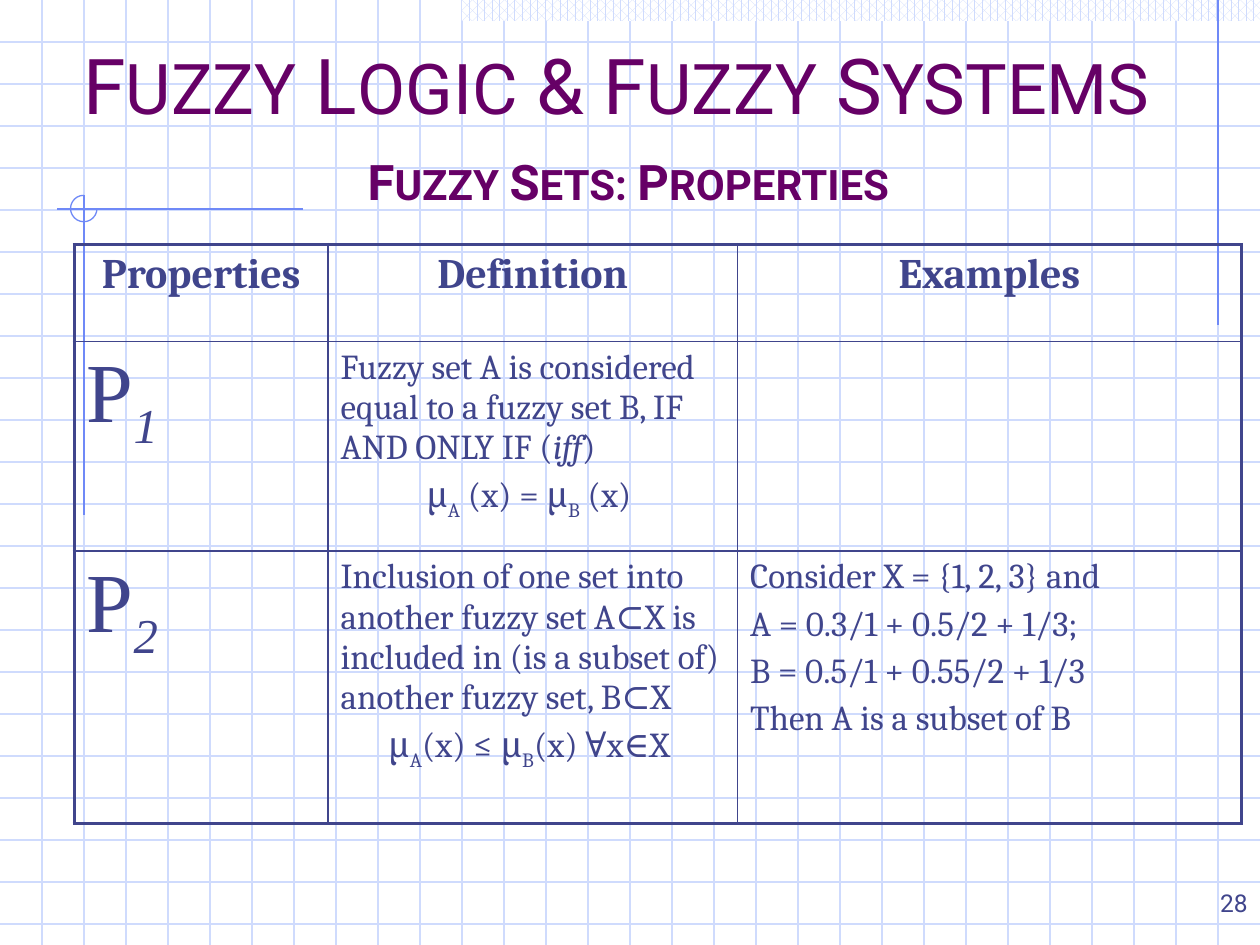
"""Build the slide on fuzzy set properties, laid out on a grid of 30 columns."""
from dataclasses import dataclass
from typing import Optional

from lxml import etree
from pptx import Presentation
from pptx import util as u
from pptx.dml.color import RGBColor
from pptx.enum import dml, shapes, text
from pptx.oxml import ns

COLORS = {"title": "660066", "ink": "40458C", "accent": "6F89F7",
          "band": "CFDBFD", "paper": "FFFFFF"}
COLUMNS, ROWS = 30, 22.5
WIDTH, HEIGHT = u.Inches(10), u.Inches(7.5)
CENTER, RIGHT = text.PP_ALIGN.CENTER, text.PP_ALIGN.RIGHT


@dataclass
class Run:
    text: str
    size: Optional[float] = None
    italic: Optional[bool] = None
    bold: Optional[bool] = None
    base: int = 0


@dataclass
class Para:
    runs: list[Run]
    size: Optional[float] = None
    font: str = "Cambria"
    color: str = "ink"
    bold: Optional[bool] = None
    align: Optional[text.PP_ALIGN] = None


@dataclass
class Rule:
    x1: float
    y1: float
    x2: float
    y2: float
    color: str = "accent"


GRID_RULES = [Rule(0, n, COLUMNS, n, "band") for n in range(1, int(ROWS) + 1)]
GRID_RULES += [Rule(n, 0, n, ROWS, "band") for n in range(1, COLUMNS)]
ACCENT_RULES = [Rule(29, 0, 29, 7.75), Rule(7.21, 4.98, 1.35, 4.98), Rule(2, 4.65, 2, 12.27)]
COL_WIDTHS = [6.04, 9.75, 12]
ROW_HEIGHTS = [2.31, 4.99, 6.49]


def grid(n: float) -> int:
    return round(n * WIDTH / COLUMNS)


def rgb(name: str) -> RGBColor:
    return RGBColor.from_string(COLORS[name])


def write(tf, paras: list[Para]) -> None:
    for i, para in enumerate(paras):
        p = tf.add_paragraph() if i else tf.paragraphs[0]
        if i:
            p.space_before = u.Pt(para.size * 0.2)
        p.alignment = para.align
        p.font.name, p.font.bold = para.font, para.bold
        p.font.color.rgb = rgb(para.color)
        if para.size:
            p.font.size = u.Pt(para.size)
        for run in para.runs:
            if run.text == "\n":
                p.add_line_break()
                continue
            r = p.add_run()
            r.text = run.text
            if run.size:
                r.font.size = u.Pt(run.size)
            r.font.italic, r.font.bold = run.italic, run.bold
            if run.base:
                r._r.get_or_add_rPr().set("baseline", str(run.base * 1000))


def add_text(s, x: float, y: float, w: float, h: float, para: Para) -> None:
    tf = s.shapes.add_textbox(grid(x), grid(y), grid(w), grid(h)).text_frame
    tf.word_wrap = True
    tf.vertical_anchor = text.MSO_ANCHOR.BOTTOM
    write(tf, [para])


def add_rule(s, rule: Rule) -> None:
    line = s.shapes.add_connector(shapes.MSO_CONNECTOR.STRAIGHT, grid(rule.x1),
                                  grid(rule.y1), grid(rule.x2), grid(rule.y2))
    line.line.color.rgb = rgb(rule.color)
    line.line.width = u.Pt(0.75)
    etree.SubElement(line._element.spPr, ns.qn("a:effectLst"))


def add_decoration(s) -> None:
    for rule in GRID_RULES:
        add_rule(s, rule)
    band = s.shapes.add_shape(shapes.MSO_SHAPE.RECTANGLE, grid(11), 0, grid(19), grid(0.5))
    band.shadow.inherit = False
    band.line.fill.background()
    band.fill.patterned()
    band.fill.pattern = dml.MSO_PATTERN.PERCENT_60
    band.fill.fore_color.rgb = rgb("band")
    band.fill.back_color.rgb = rgb("paper")
    for rule in ACCENT_RULES:
        add_rule(s, rule)
    arc = s.shapes.add_shape(shapes.MSO_SHAPE.ARC, grid(1.68), grid(4.65), grid(0.63), grid(0.63))
    arc.adjustments[0], arc.adjustments[1] = 0, 162
    arc.shadow.inherit = False
    arc.fill.background()
    arc.line.color.rgb = rgb("accent")
    arc.line.width = u.Pt(0.75)


def set_borders(cell, outer: dict[str, bool]) -> None:
    tc_pr = cell._tc.get_or_add_tcPr()
    for i, (side, is_outer) in enumerate(outer.items()):
        ln = etree.Element(ns.qn(f"a:ln{side}"), w=str(u.Pt(2.25 if is_outer else 1)))
        fill = etree.SubElement(ln, ns.qn("a:solidFill"))
        etree.SubElement(fill, ns.qn("a:srgbClr"), val=COLORS["ink"])
        tc_pr.insert(i, ln)


def add_grid_table(s, rows: list[list[list[Para]]]) -> None:
    n_rows, n_cols = len(ROW_HEIGHTS), len(COL_WIDTHS)
    table = s.shapes.add_table(n_rows, n_cols, grid(1.77), grid(5.82),
                               grid(sum(COL_WIDTHS)), grid(sum(ROW_HEIGHTS))).table
    table.first_row = table.horz_banding = False
    for col, width in zip(table.columns, COL_WIDTHS):
        col.width = grid(width)
    for i, (row, height) in enumerate(zip(rows, ROW_HEIGHTS)):
        table.rows[i].height = grid(height)
        for j, paras in enumerate(row):
            cell = table.cell(i, j)
            cell.fill.background()
            set_borders(cell, {"L": j == 0, "R": j == n_cols - 1,
                               "T": i == 0, "B": i == n_rows - 1})
            write(cell.text_frame, paras)


def heading(label: str) -> list[Para]:
    return [Para([Run(label)], 24, bold=True, align=CENTER)]


def property_name(number: str) -> list[Para]:
    return [Para([Run("P"), Run(number, italic=True, base=-25)], 48, "Times New Roman")]


def body(*runs: Run) -> Para:
    return Para(list(runs), 20)


def formula(middle: str, end: str) -> Para:
    return Para([Run("μ"), Run("A", base=-30), Run(middle), Run("B", base=-30), Run(end)],
                20, align=CENTER)


def small_caps(parts: list[str], large: int, small: int, bold: bool) -> list[Run]:
    return [Run(part, small if i % 2 else large, bold=bold) for i, part in enumerate(parts)]


def main() -> None:
    prs = Presentation()
    prs.slide_width, prs.slide_height = WIDTH, HEIGHT
    s = prs.slides.add_slide(prs.slide_layouts[6])
    add_decoration(s)
    add_text(s, 23.76, 20.49, 6.24, 1.5, Para([Run("28")], 14, "Roboto", align=RIGHT))
    title = small_caps(["F", "UZZY", " L", "OGIC", " & F", "UZZY", " S", "YSTEMS "], 44, 40, False)
    subtitle = small_caps(["F", "UZZY ", "S", "ETS: ", "P", "ROPERTIES "], 28, 24, True)
    add_text(s, 1.26, 1.5, 27.24, 3.75,
             Para([*title, Run("\n"), Run(" ", 40), *subtitle],
                  font="Roboto", color="title", align=CENTER))
    equality = [body(Run("Fuzzy set A is considered equal to a fuzzy set B, IF AND ONLY IF ("),
                     Run("iff", italic=True), Run(")")),
                formula(" (x) = μ", " (x) ")]
    inclusion = [body(Run("Inclusion of one set into another fuzzy set A⊂X is included in "
                          "(is a subset of) another fuzzy set, B⊂X")),
                 formula("(x) ≤ μ", "(x) ∀x∈X ")]
    example = [body(Run(line)) for line in (
        "Consider X = {1, 2, 3} and", "A = 0.3/1 + 0.5/2 + 1/3;",
        "B = 0.5/1 + 0.55/2 + 1/3", "Then A is a subset of B")]
    add_grid_table(s, [
        [heading(label) for label in ("Properties", "Definition", "Examples")],
        [property_name("1"), equality, []],
        [property_name("2"), inclusion, example],
    ])
    prs.save("out.pptx")


if __name__ == "__main__":
    main()
